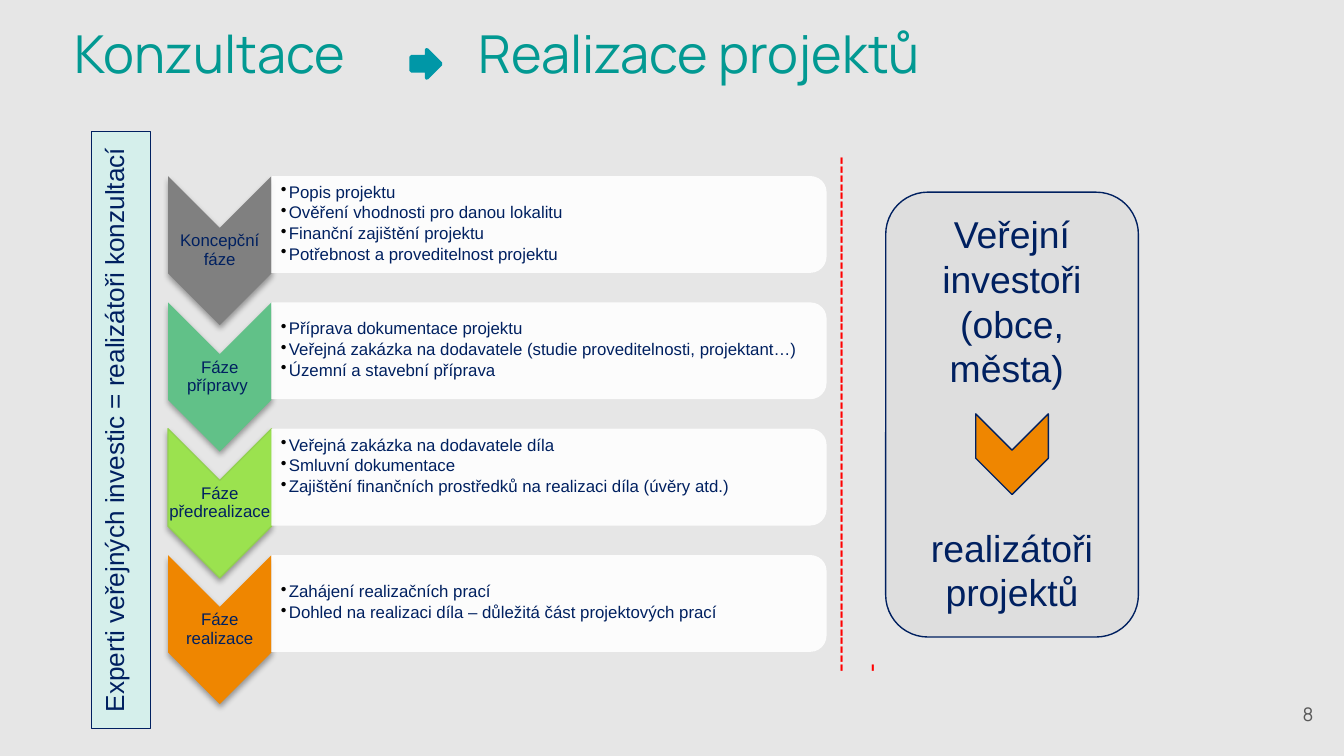
from lxml import etree
from pptx import Presentation
from pptx import util as u
from pptx.dml.color import RGBColor
from pptx.enum import shapes, text
from pptx.oxml.ns import qn

KIND = shapes.MSO_SHAPE
ALIGN = text.PP_ALIGN
ANCHOR = text.MSO_ANCHOR
SLIDE_W, SLIDE_H = 10, 10 * 9 / 16


class Theme:
    BACKGROUND = "E6E6E6"
    NAVY = "002060"
    TEAL = "029992"
    ARROW = "0097A7"
    RED = "FF0000"
    GREY = "595959"
    BLACK = "000000"
    WHITE = "FFFFFF"
    SIDEBAR = "D5EFEB"
    PANEL = "DEDEDE"
    CONCEPT = "808080"
    PREPARATION = "61C188"
    PRE_REALISATION = "9BE24F"
    PRE_REALISATION_LINE = "92D050"
    REALISATION = "EF8600"
    BODY_FONT = "Arial"
    TITLE_FONT = "Manrope"
    TITLE, PANEL_TEXT, SIDE_TEXT, NUMBER, SMALL = 28, 20, 14, 10, 9


def sub(parent, tag, **attrs):
    return etree.SubElement(parent, qn(tag), {k: str(v) for k, v in attrs.items()})


def write_text(sp, lines, size, color=Theme.NAVY, font=Theme.BODY_FONT,
               align=ALIGN.LEFT, anchor=ANCHOR.TOP, insets=(0.1, 0.05, 0.1, 0.05),
               spacing=None, before=0, after=0, bullet=False, tab=None,
               vertical=False, outline=None):
    """Fill a shape with one paragraph per line; insets are left, top, right, bottom."""
    tf = sp.text_frame
    tf.word_wrap = True
    tf.vertical_anchor = anchor
    tf.margin_left, tf.margin_top, tf.margin_right, tf.margin_bottom = map(u.Inches, insets)
    if vertical:
        tf._txBody.bodyPr.set("vert", "vert270")
    for i, line in enumerate(lines):
        p = tf.paragraphs[0] if i == 0 else tf.add_paragraph()
        p.alignment = align
        if spacing:
            p.line_spacing = spacing
        if i and before:
            p.space_before = u.Pt(before)
        if after:
            p.space_after = u.Pt(after)
        pPr = p._p.get_or_add_pPr()
        if bullet:
            indent = u.Inches(0.06)
            pPr.set("marL", str(indent))
            pPr.set("indent", str(-indent))
            sub(sub(pPr, "a:buClr"), "a:srgbClr", val=Theme.BLACK)
            sub(pPr, "a:buChar", char="•")
        if tab:
            sub(sub(pPr, "a:tabLst"), "a:tab", pos=u.Inches(tab), algn="l")
        r = p.add_run()
        r.text = line
        r.font.size = u.Pt(size)
        r.font.name = font
        r.font.color.rgb = RGBColor.from_string(color)
        if outline:
            ln = etree.Element(qn("a:ln"), w=str(u.Pt(0.75)))
            sub(sub(ln, "a:solidFill"), "a:srgbClr", val=outline)
            r._r.get_or_add_rPr().insert(0, ln)
        sub(p._p, "a:endParaRPr", sz=size * 100)


class SlideBuilder:
    def __init__(self, slide, theme):
        self.slide = slide
        self.theme = theme

    def text(self, box, lines, size, **fmt):
        sp = self.slide.shapes.add_textbox(*map(u.Inches, box))
        write_text(sp, lines, size, **fmt)

    def shape(self, kind, box, fill, line=None, width=0.75, turned=False,
              alpha=None, shadow=False):
        """Add a preset shape; box is the area covered after any quarter turn."""
        x, y, w, h = box
        if turned:
            x, y, w, h = x + (w - h) / 2, y + (h - w) / 2, h, w
        sp = self.slide.shapes.add_shape(kind, *map(u.Inches, (x, y, w, h)))
        sp.rotation = 90 if turned else 0
        sp.shadow.inherit = False
        sp.fill.solid()
        sp.fill.fore_color.rgb = RGBColor.from_string(fill)
        if line:
            sp.line.color.rgb = RGBColor.from_string(line)
            sp.line.width = u.Pt(width)
        else:
            sp.line.fill.background()
        spPr = sp._element.spPr
        if alpha:
            sub(spPr.find(".//" + qn("a:srgbClr")), "a:alpha", val=alpha * 1000)
        if shadow:
            outer = sub(spPr.find(qn("a:effectLst")), "a:outerShdw", blurRad=u.Pt(3.1),
                        dist=u.Pt(1.8), dir=90 * 60000, rotWithShape=0)
            sub(sub(outer, "a:srgbClr", val=self.theme.BLACK), "a:alpha", val=35000)
        return sp

    def phase(self, top, label, fill, line, points, bottom_inset):
        """Draw one project phase: chevron, label, white card and its points."""
        size = self.theme.SMALL
        self.shape(KIND.CHEVRON, (1.25, top, 0.77, 1.11), fill, line, turned=True, shadow=True)
        self.text((1.25, top + 0.39, 0.77, 0.33), [label], size, align=ALIGN.CENTER,
                  anchor=ANCHOR.MIDDLE, insets=(0.01,) * 4, spacing=0.9)
        self.shape(KIND.ROUND_2_SAME_RECTANGLE, (2.02, top, 4.13, 0.72),
                   self.theme.WHITE, turned=True, alpha=90)
        self.text((2.02, top + 0.03, 4.1, 0.65), points, size, anchor=ANCHOR.MIDDLE,
                  insets=(0.07, 0.01, 0.01, bottom_inset), spacing=0.9, after=1.4, bullet=True)


PHASES = [
    ("Koncepční fáze", Theme.CONCEPT, None,
     ["Popis projektu", "Ověření vhodnosti pro danou lokalitu",
      "Finanční zajištění projektu", "Potřebnost a proveditelnost projektu"], 0.01),
    ("Fáze přípravy ", Theme.PREPARATION, None,
     ["Příprava dokumentace projektu",
      "Veřejná zakázka na dodavatele (studie proveditelnosti, projektant…)",
      "Územní a stavební příprava"], 0.01),
    ("Fáze předrealizace", Theme.PRE_REALISATION, Theme.PRE_REALISATION_LINE,
     ["Veřejná zakázka na dodavatele díla", "Smluvní dokumentace",
      "Zajištění finančních prostředků na realizaci díla (úvěry atd.)"], 0.16),
    ("Fáze realizace", Theme.REALISATION, None,
     ["Zahájení realizačních prací",
      "Dohled na realizaci díla – důležitá část projektových prací"], 0.01),
]
FIRST_PHASE_TOP, PHASE_PITCH = 1.31, 0.94


def main():
    prs = Presentation()
    prs.slide_width, prs.slide_height = u.Inches(SLIDE_W), u.Inches(SLIDE_H)
    t = Theme
    s = SlideBuilder(prs.slides.add_slide(prs.slide_layouts[6]), t)

    s.shape(KIND.RECTANGLE, (0, 0, SLIDE_W, SLIDE_H), t.BACKGROUND)
    s.text((9.27, 5.1, 0.6, 0.43), ["8"], t.NUMBER, color=t.GREY, font=t.TITLE_FONT,
           align=ALIGN.RIGHT, anchor=ANCHOR.MIDDLE, insets=(0.1,) * 4)

    for i, phase in enumerate(PHASES):
        s.phase(FIRST_PHASE_TOP + i * PHASE_PITCH, *phase)

    s.text((0.46, 0.3, 8.8, 0.55), ["Konzultace\tRealizace projektů"], t.TITLE,
           color=t.TEAL, font=t.TITLE_FONT, insets=(0.1,) * 4, spacing=u.Pt(16), tab=3)
    s.shape(KIND.RIGHT_ARROW, (3.06, 0.37, 0.22, 0.21), t.ARROW, t.ARROW, width=2)

    sidebar = s.shape(KIND.RECTANGLE, (0.68, 0.98, 0.44, 4.44), t.SIDEBAR, t.NAVY)
    write_text(sidebar, ["Experti veřejných investic = realizátoři konzultací"],
               t.SIDE_TEXT, align=ALIGN.CENTER, vertical=True)
    s.text((6.07, 1.06, 0.44, 4.04), ["-" * 60], t.SIDE_TEXT, color=t.RED,
           vertical=True, outline=t.RED)

    panel = s.shape(KIND.ROUNDED_RECTANGLE, (6.59, 1.43, 1.88, 3.31), t.PANEL, t.NAVY)
    write_text(panel, ["Veřejní investoři (obce, města) ", "realizátoři projektů"],
               t.PANEL_TEXT, align=ALIGN.CENTER, before=72)
    s.shape(KIND.CHEVRON, (7.26, 3.08, 0.54, 0.6), t.REALISATION, t.NAVY, turned=True)

    prs.save("out.pptx")


if __name__ == "__main__":
    main()
